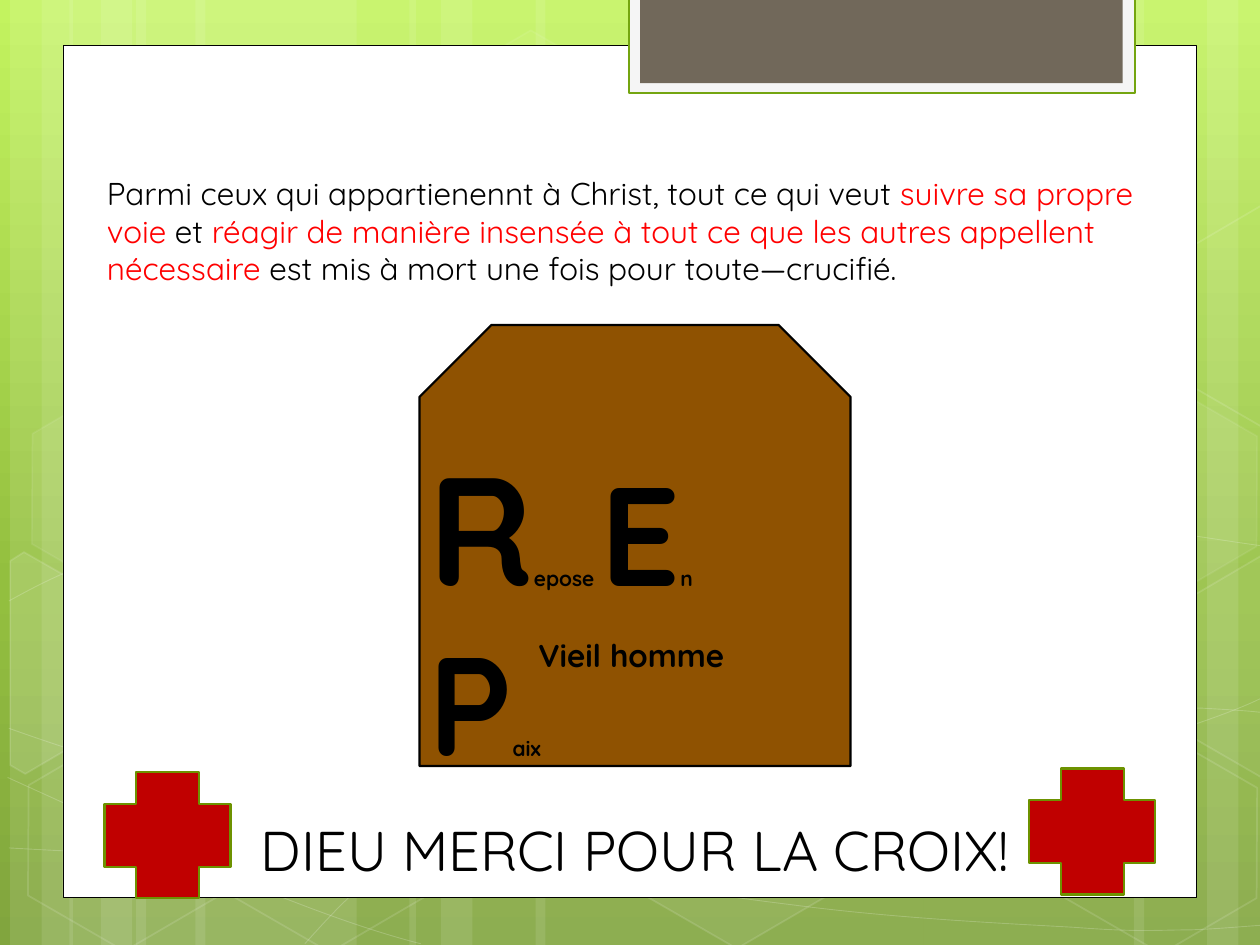
from copy import deepcopy
from dataclasses import dataclass
from math import cos, radians, sin

from pptx import Presentation
from pptx.dml.color import RGBColor
from pptx.enum.shapes import MSO_SHAPE
from pptx.enum.text import MSO_AUTO_SIZE, PP_ALIGN
from pptx.oxml.ns import qn
from pptx.oxml.xmlchemy import OxmlElement
from pptx.util import Inches, Pt

RECT = MSO_SHAPE.RECTANGLE
HEX = MSO_SHAPE.HEXAGON
SNIP = MSO_SHAPE.SNIP_2_SAME_RECTANGLE
PLUS = MSO_SHAPE.CROSS
GROW = MSO_AUTO_SIZE.SHAPE_TO_FIT_TEXT
LEFT, CENTER = PP_ALIGN.LEFT, PP_ALIGN.CENTER
TILT = 30


@dataclass(frozen=True)
class Theme:
    font: str = "Quicksand"
    black: str = "000000"
    white: str = "FFFFFF"
    red: str = "FF0000"
    cross: str = "C00000"
    edge: str = "6D9200"
    brown: str = "8F5201"
    pale: str = "F5F5F5"
    green: str = "74A510"
    taupe: str = "71685A"
    sky: tuple = ((0, "C3F35F"), (0.62, "93BF3F"), (1, "81A53E"))
    body: int = 18
    title: int = 32
    small: int = 12
    big: int = 80
    huge: int = 88


THEME = Theme()

BANDS = [(1.08, 1.75), (0.08, 0.5), (0.33, 0.83), (1.55, 1.75), (0.55, 0.5),
         (0.8, 0.83), (7.33, 1.75), (9.58, 0.5), (9, 0.83), (4.25, 3.08),
         (3.25, 0.5), (3.5, 0.83)]

CURVES = [
    [(0.07, 6.73), (0.61, 6.76), (1.15, 6.79), (1.9, 6.78), (2.65, 6.77),
     (3.58, 6.75), (4.58, 6.65), (5.58, 6.55), (7, 6.36), (7.92, 6.17),
     (8.83, 5.98), (9.77, 5.68), (10.07, 5.51)],
    [(0.07, 4.77), (0.36, 4.61), (0.65, 4.46), (1.21, 4.31), (1.78, 4.16),
     (2.59, 3.94), (3.47, 3.87), (4.36, 3.8), (5.44, 3.79), (6.54, 3.87),
     (7.64, 3.95), (9.47, 4.26), (10.07, 4.34)],
    [(0.06, 6.17), (1.27, 6.72), (2.47, 7.27), (3.34, 7.49)],
    [(0.07, 5.78), (0.38, 5.89), (0.7, 6), (1.28, 6.16), (1.86, 6.31),
     (2.73, 6.56), (3.57, 6.73), (4.4, 6.9), (5.45, 7.08), (6.28, 7.18),
     (7.11, 7.29), (8, 7.33), (8.53, 7.36), (9.05, 7.4), (9.19, 7.38),
     (9.45, 7.38), (9.71, 7.37), (9.89, 7.35), (10.07, 7.34)],
    [(2.42, 7.49), (2.6, 7.29), (2.78, 7.09), (3.02, 6.91), (3.26, 6.73),
     (3.6, 6.53), (3.88, 6.39), (4.16, 6.25), (4.33, 6.19), (4.7, 6.09),
     (5.06, 5.99), (5.73, 5.85), (6.08, 5.78), (6.44, 5.71), (6.49, 5.71),
     (6.8, 5.69), (7.11, 5.66), (7.6, 5.63), (7.94, 5.62), (8.29, 5.61),
     (8.86, 5.62), (8.86, 5.62), (9.08, 5.62), (9.31, 5.62), (9.53, 5.62),
     (9.71, 5.63), (9.88, 5.64), (9.97, 5.65), (10.06, 5.66),
     (10.03, 5.65), (10.06, 5.66)],
]

CELLS = [(3.34, 0.36, 4, 8), (4.97, 5.89, 6, 12), (0.11, 5.91, 0, 12),
         (0.14, 3.12, 7, 8), (1.74, 5.92, 0, 12), (7.53, 4.53, 10, 12),
         (8.34, 5.93, 0, 12), (8.34, 3.14, 7, 8)]

PARTS = [
    ([(0.08, 4.45), (0.19, 4.38), (0.96, 4.82), (0.95, 5.7), (0.2, 6.14),
      (0.08, 6.07)], (0.36, 5.35), 10),
    ([(9.26, 4.85), (10.01, 4.41), (10.09, 4.46), (10.09, 6.13),
      (10.02, 6.17), (9.26, 5.73)], (9.85, 5.2), 4),
    ([(9.26, 2.07), (10.01, 1.63), (10.1, 1.68), (10.09, 3.35),
      (10.02, 3.39), (9.26, 2.95)], (9.85, 2.41), 0),
]


def tint(fill, color, node, alpha):
    fill.solid()
    fill.fore_color.rgb = RGBColor.from_string(color)
    if alpha < 100:
        tag = OxmlElement("a:alpha")
        tag.set("val", str(alpha * 1000))
        node.find(qn("a:solidFill"))[0].append(tag)


def paint(shape, fill=None, line=None, width=1.25, clear=100, faint=100):
    shape.shadow.inherit = False
    props = shape._element.spPr
    if fill and clear:
        tint(shape.fill, fill, props, clear)
    else:
        shape.fill.background()
    if line:
        shape.line.width = Pt(width)
        tint(shape.line.fill, line, props.find(qn("a:ln")), faint)
    else:
        shape.line.fill.background()


def add_box(slide, kind, spot, *style):
    shape = slide.shapes.add_shape(kind, *map(Inches, spot))
    paint(shape, *style)
    return shape


def add_form(slide, points, closed):
    spots = [(Inches(x), Inches(y)) for x, y in points]
    pen = slide.shapes.build_freeform(*spots[0])
    pen.add_line_segments(spots[1:], close=closed)
    return pen.convert_to_shape()


def add_curve(slide, points):
    shape = add_form(slide, points, False)
    lines = list(shape._element.iter(qn("a:lnTo")))
    for i in range(0, len(lines), 3):
        arc = OxmlElement("a:cubicBezTo")
        lines[i].addprevious(arc)
        for line in lines[i:i + 3]:
            arc.append(line[0])
            line.getparent().remove(line)
    return shape


def turn(points, mid):
    c, s = cos(radians(TILT)), sin(radians(TILT))
    moves = [(x - mid[0], y - mid[1]) for x, y in points]
    return [(mid[0] + x * c + y * s, mid[1] + y * c - x * s)
            for x, y in moves]


def add_text(slide, spot, lines, align=LEFT, bold=False):
    frame = slide.shapes.add_textbox(*map(Inches, spot)).text_frame
    frame.word_wrap = True
    frame.auto_size = GROW
    para = frame.paragraphs[0]
    para.alignment = align
    for i, runs in enumerate(lines):
        if i:
            para.add_line_break()
        for text, size, color in runs:
            run = para.add_run()
            run.text = text
            run.font.name = THEME.font
            run.font.size = Pt(size)
            run.font.bold = bold
            run.font.color.rgb = RGBColor.from_string(color)


def add_sky(slide):
    fill = slide.background.fill
    fill.gradient()
    fill.gradient_angle = 270
    stops = slide._element.find(".//" + qn("a:gsLst"))
    stops.insert(1, deepcopy(stops[0]))
    for stop, (place, color) in zip(fill.gradient_stops, THEME.sky):
        stop.position = place
        stop.color.rgb = RGBColor.from_string(color)


def add_decor(slide):
    white = THEME.white
    for left, width in BANDS:
        add_box(slide, RECT, (left, 0, width, 7.5), white, None, 0, 10)
    for points in CURVES:
        paint(add_curve(slide, points), None, white, 0.5, 100, 20)
    for left, top, clear, faint in CELLS:
        cell = add_box(slide, HEX, (left, top, 1.75, 1.52), white, white, 1,
                       clear, faint)
        cell.rotation = TILT
        cell.adjustments[0] = 0.285
    for points, mid, clear in PARTS:
        part = add_form(slide, turn(points, mid), True)
        part.rotation = TILT
        paint(part, white, white, 1, clear, 12)


def main():
    deck = Presentation()
    deck.slide_width, deck.slide_height = Inches(10), Inches(7.5)
    slide = deck.slides.add_slide(deck.slide_layouts[6])
    t = THEME
    add_sky(slide)
    add_decor(slide)
    add_box(slide, RECT, (0.5, 0.36, 9, 6.76), t.white, t.black, 0.5)
    add_box(slide, RECT, (4.99, -0.02, 4.02, 0.76), t.pale, t.green)
    add_box(slide, RECT, (5.08, -0.02, 3.83, 0.68), t.taupe)
    add_text(slide, (0.75, 1.33, 8.5, 1.01), [[
        ("Parmi ceux qui appartienennt à Christ, tout ce qui veut ",
         t.body, t.black),
        ("suivre sa propre voie ", t.body, t.red),
        ("et ", t.body, t.black),
        ("réagir de manière insensée à tout ce que les autres appellent "
         "nécessaire ", t.body, t.red),
        ("est mis à mort une fois pour toute—crucifié.", t.body, t.black)]])
    add_box(slide, SNIP, (3.33, 2.58, 3.42, 3.5), t.brown, t.black)
    add_text(slide, (3.3, 3.38, 3.38, 1.58), [
        [("R", t.huge, t.black), ("epose ", t.small, t.black),
         ("E", t.big, t.black), ("n", t.small, t.black)],
        [("P", t.big, t.black), ("aix", t.small, t.black)]], bold=True)
    add_text(slide, (0.58, 6.42, 8.92, 0.64),
             [[("DIEU MERCI POUR LA CROIX!", t.title, t.black)]], CENTER)
    for left, top in ((0.83, 6.13), (8.17, 6.1)):
        add_box(slide, PLUS, (left, top, 1, 1), t.cross, t.edge)
    add_text(slide, (3.6, 5, 2.82, 0.4),
             [[("Vieil homme", t.body, t.black)]], CENTER, True)
    deck.save("out.pptx")


if __name__ == "__main__":
    main()
